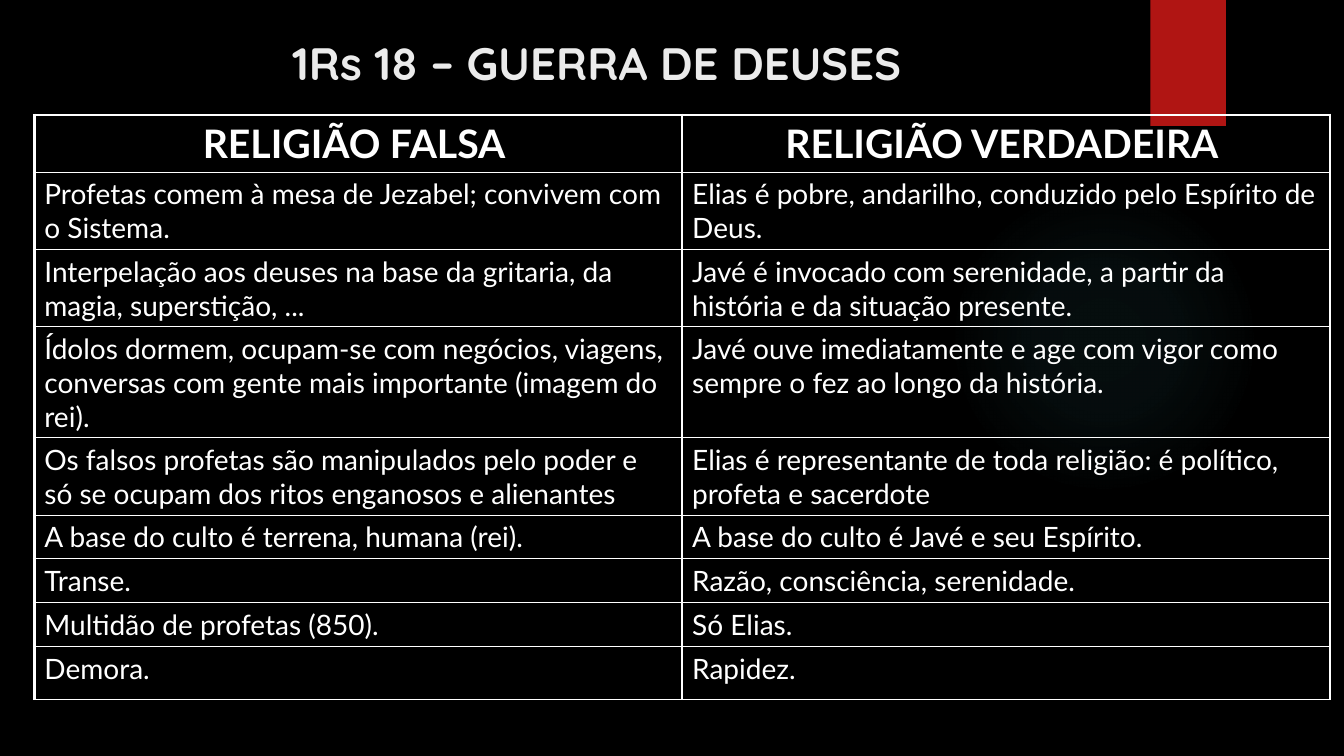
from lxml.etree import SubElement
from pptx import Presentation
from pptx.dml.color import RGBColor
from pptx.enum.shapes import MSO_SHAPE
from pptx.enum.text import MSO_ANCHOR, PP_ALIGN
from pptx.oxml import parse_xml
from pptx.oxml.ns import nsdecls, qn
from pptx.util import Inches, Pt

HEADINGS = ("RELIGIÃO FALSA ", "RELIGIÃO VERDADEIRA ")
CONTRASTS = [
    ("Profetas comem à mesa de Jezabel; convivem com o Sistema.",
     "Elias é pobre, andarilho, conduzido pelo Espírito de Deus."),
    ("Interpelação aos deuses na base da gritaria, da magia, superstição, ...",
     "Javé é invocado com serenidade, a partir da história e da situação presente."),
    ("Ídolos dormem, ocupam-se com negócios, viagens, conversas com gente mais importante (imagem do rei).",
     "Javé ouve imediatamente e age com vigor como sempre o fez ao longo da história."),
    ("Os falsos profetas são manipulados pelo poder e só se ocupam dos ritos enganosos e alienantes",
     "Elias é representante de toda religião: é político, profeta e sacerdote"),
    ("A base do culto é terrena, humana (rei).", "A base do culto é Javé e seu Espírito."),
    ("Transe.", "Razão, consciência, serenidade."),
    ("Multidão de profetas (850).", "Só Elias."),
    ("Demora.", "Rapidez."),
]
ROW_HEIGHTS = [0.52, 0.7, 0.7, 1.01, 0.7, 0.4, 0.4, 0.4, 0.53]


def color(value):
    return RGBColor.from_string(value)


class ReligionSlide:
    title_font, body_font = "Quicksand", "Lato"
    white, title_color, red, teal = "FFFFFF", "EBEBEB", "B01513", "50B9C1"
    thin, thick = 1, 2.25

    def __init__(self, page):
        self.page = page
        page.background.fill.solid()
        page.background.fill.fore_color.rgb = color("000000")

    def shape(self, kind, left, top, width, height):
        shape = self.page.shapes.add_shape(
            kind, Inches(left), Inches(top), Inches(width), Inches(height))
        shape.shadow.inherit = False
        shape.line.fill.background()
        return shape

    def ribbon(self, left, top, width, height):
        ribbon = self.shape(MSO_SHAPE.RECTANGLE, left, top, width, height)
        ribbon.fill.solid()
        ribbon.fill.fore_color.rgb = color(self.red)

    def glow(self, left, top, size, stops):
        glow = self.shape(MSO_SHAPE.OVAL, left, top, size, size)
        stop_xml = "".join(
            f'<a:gs pos="{place * 1000}"><a:srgbClr val="{self.teal}">'
            f'<a:alpha val="{alpha * 1000}"/></a:srgbClr></a:gs>'
            for place, alpha in stops)
        gradient = parse_xml(
            f'<a:gradFill {nsdecls("a")}><a:gsLst>{stop_xml}</a:gsLst><a:path path="circle">'
            '<a:fillToRect l="50000" t="50000" r="50000" b="50000"/></a:path></a:gradFill>')
        glow._element.spPr.find(qn("a:prstGeom")).addnext(gradient)

    def set_text(self, para, text, font, size, text_color, bold, align):
        para.text = text
        para.alignment = align
        para.font.name = font
        para.font.size = Pt(size)
        para.font.bold = bold
        para.font.color.rgb = color(text_color)

    def title(self, text, left, top, width, height):
        box = self.page.shapes.add_textbox(
            Inches(left), Inches(top), Inches(width), Inches(height))
        frame = box.text_frame
        frame.word_wrap = True
        frame.vertical_anchor = MSO_ANCHOR.TOP
        self.set_text(frame.paragraphs[0], text, self.title_font, 32.4,
                      self.title_color, True, PP_ALIGN.CENTER)

    def borders(self, cell, widths):
        properties = cell._tc.get_or_add_tcPr()
        for side, width in zip("LRTB", widths):
            line = SubElement(properties, qn(f"a:ln{side}"), w=str(Pt(width)))
            fill = SubElement(line, qn("a:solidFill"))
            SubElement(fill, qn("a:srgbClr"), val=self.white)

    def table(self, rows, left, top, width, height, row_heights):
        holder = self.page.shapes.add_table(
            len(rows), len(rows[0]), Inches(left), Inches(top), Inches(width), Inches(height))
        table = holder.table
        table.first_row = table.horz_banding = False
        for row, row_height in zip(table.rows, row_heights):
            row.height = Inches(row_height)
        holder.height = Inches(height)
        for r, texts in enumerate(rows):
            heading = r == 0
            for c, text in enumerate(texts):
                cell = table.cell(r, c)
                self.set_text(cell.text_frame.paragraphs[0], text, self.body_font,
                              28 if heading else 20, self.white, heading,
                              PP_ALIGN.CENTER if heading else PP_ALIGN.LEFT)
                self.borders(cell, (
                    self.thick if c == 0 else self.thin,
                    self.thick if c == len(texts) - 1 else self.thin,
                    self.thick if heading else self.thin,
                    self.thin))
                cell.fill.background()


def main():
    deck = Presentation()
    deck.slide_width, deck.slide_height = Inches(13.33), Inches(7.5)
    slide = ReligionSlide(deck.slides.add_slide(deck.slide_layouts[6]))

    # Backdrop
    slide.glow(9.41, 1.83, 3.08, [(0, 7), (36, 6), (69, 0)])
    slide.ribbon(11.41, 0, 0.75, 1.25)

    # Title and comparison
    slide.title("1Rs 18 – GUERRA DE DEUSES", 0.67, 0.3, 10.5, 0.77)
    slide.table([HEADINGS, *CONTRASTS], 0.34, 1.14, 12.85, 5.79, ROW_HEIGHTS)

    deck.save("out.pptx")


if __name__ == "__main__":
    main()
